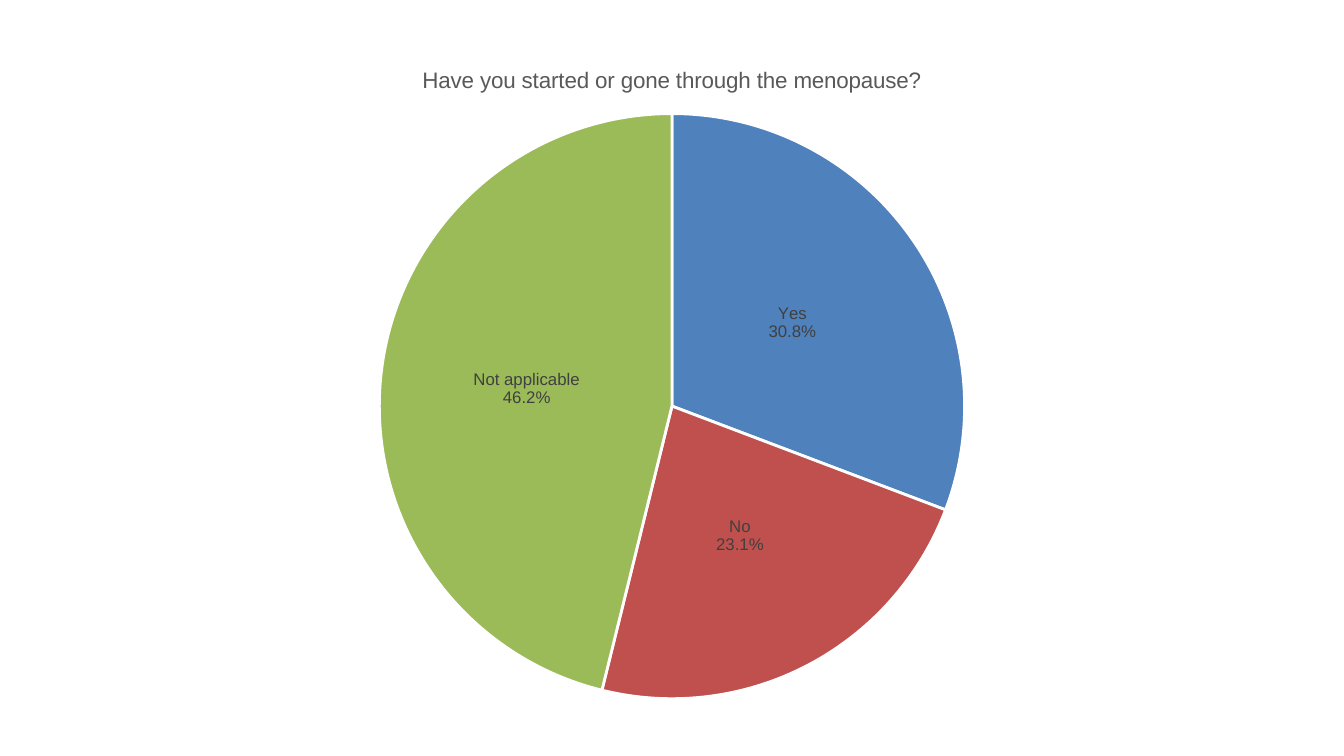
from lxml import etree
from pptx import Presentation
from pptx.chart.data import CategoryChartData
from pptx.dml.color import RGBColor
from pptx.enum.chart import XL_CHART_TYPE as ChartType, XL_LABEL_POSITION as LabelPosition
from pptx.oxml.ns import qn
from pptx.util import Inches, Pt

# Content
QUESTION = "Have you started or gone through the menopause?"
ANSWERS = [("Yes", 30.8, "blue"), ("No", 23.1, "red"), ("Not applicable", 46.2, "green")]
COLORS = {
    "blue": "4F81BD", "red": "C0504D", "green": "9BBB59",
    "title": "595959", "label": "404040", "text": "000000", "edge": "FFFFFF",
}
WIDTH, HEIGHT = 13.33, 7.5
CHART_WIDTH, CHART_HEIGHT, CHART_TOP = 10.17, 6.64, 0.43


def color(name):
    return RGBColor.from_string(COLORS[name])


def set_font(font, face, size, color_name):
    font.name, font.size, font.bold = face, Pt(size), False
    font.color.rgb = color(color_name)


# Page
deck = Presentation()
deck.slide_width, deck.slide_height = Inches(WIDTH), Inches(HEIGHT)
page = deck.slides.add_slide(deck.slide_layouts[6])

# Pie chart, centred across the page
data = CategoryChartData()
data.categories = [answer for answer, _, _ in ANSWERS]
data.add_series("Series 1", [share for _, share, _ in ANSWERS])
chart = page.shapes.add_chart(
    ChartType.PIE, Inches((WIDTH - CHART_WIDTH) / 2), Inches(CHART_TOP),
    Inches(CHART_WIDTH), Inches(CHART_HEIGHT), data).chart
chart.has_legend = False
set_font(chart.font, "Calibri", 10, "text")

# Title
title = chart.chart_title
title.text_frame.text = QUESTION
set_font(title.text_frame.paragraphs[0].runs[0].font, "Arial", 16, "title")

# Slices
plot = chart.plots[0]
plot.vary_by_categories = True
pie = plot.series[0]
for index, (_, _, fill_name) in enumerate(ANSWERS):
    slice_format = pie.points[index].format
    slice_format.fill.solid()
    slice_format.fill.fore_color.rgb = color(fill_name)
    slice_format.line.color.rgb = color("edge")
    slice_format.line.width = Pt(2)

# Labels: answer above its percentage
labels = pie.data_labels
labels.show_category_name = labels.show_percentage = True
labels.show_value = False
labels.number_format, labels.number_format_is_linked = "0.0%", False
labels.position = LabelPosition.CENTER
set_font(labels.font, "Arial", 12, "label")
separator = etree.Element(qn("c:separator"))
separator.text = "\n"
labels._element.find(qn("c:showBubbleSize")).addnext(separator)

deck.save("out.pptx")
